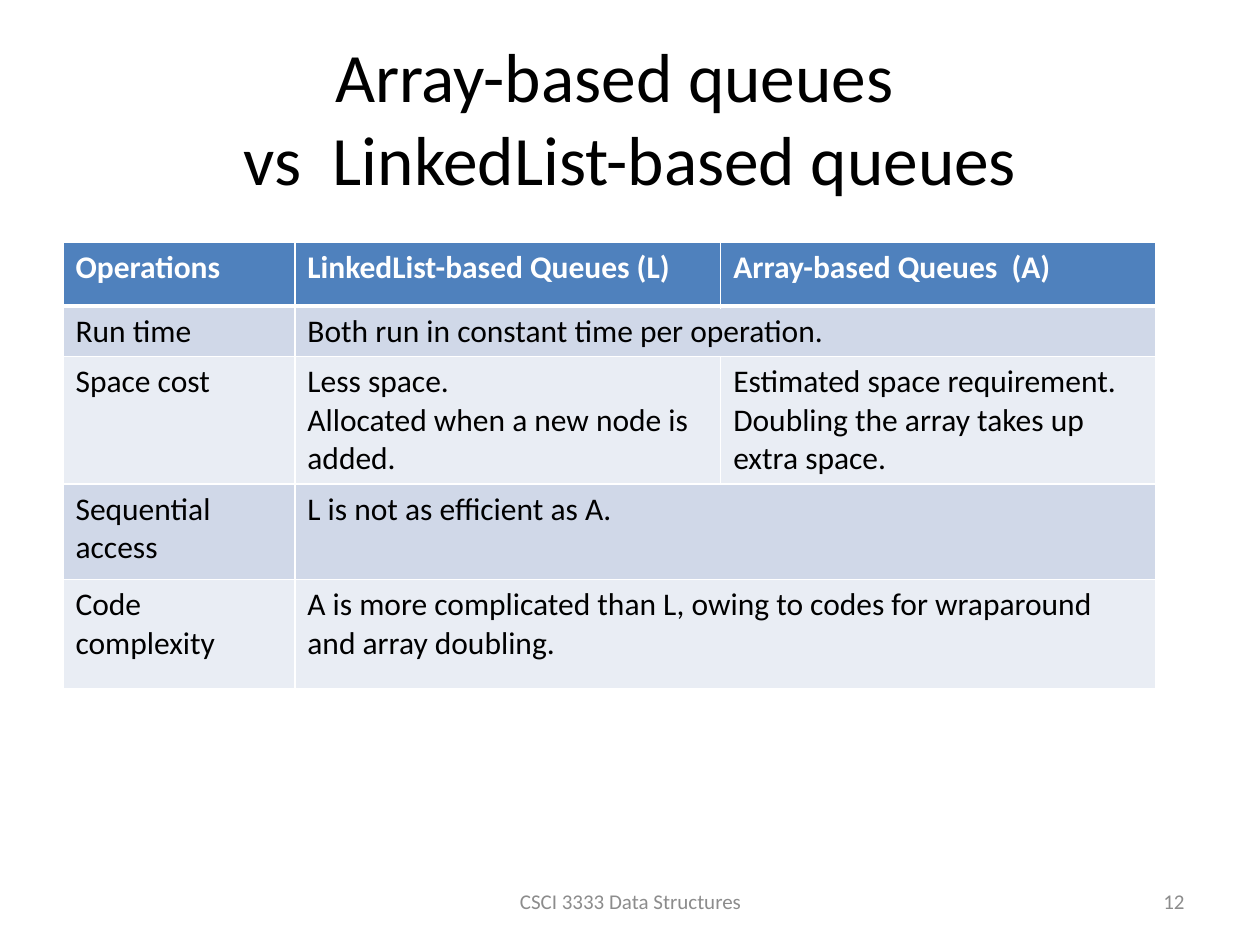
from lxml import etree
from pptx import Presentation
from pptx import util as u
from pptx.dml.color import RGBColor
from pptx.enum import text
from pptx.oxml import ns

WIDTH, HEIGHT = 10, 7.5
FONT = "Calibri"
COLOURS = {
    "ink": "000000",
    "paper": "FFFFFF",
    "muted": "8C8C8C",
    "header": "4F81BD",
    "band_dark": "D0D8E8",
    "band_light": "E9EDF4",
}
COLUMNS = [1.84, 3.38, 3.45]
ROWS = [0.51, 0.39, 1.01, 0.76, 0.87]
COMPARISON = [
    [["Operations"], ["LinkedList-based Queues (L)"], ["Array-based Queues  (A)"]],
    [["Run time"], ["Both run in constant time per operation."]],
    [
        ["Space cost"],
        ["Less space.", "Allocated when a new node is added."],
        ["Estimated space requirement.", "Doubling the array takes up extra space."],
    ],
    [["Sequential access"], ["L is not as efficient as A."]],
    [
        ["Code complexity"],
        ["A is more complicated than L, owing to codes for wraparound and array doubling."],
    ],
]


def colour(name):
    return RGBColor.from_string(COLOURS[name])


def add_span(para, words, size, ink, bold=False):
    span = para.add_run()
    span.text = words
    span.font.name = FONT
    span.font.size = u.Pt(size)
    span.font.bold = bold
    span.font.color.rgb = colour(ink)


def add_text(page, box, lines, size, ink, align):
    frame = page.shapes.add_textbox(*map(u.Inches, box)).text_frame
    frame.word_wrap = True
    frame.vertical_anchor = text.MSO_ANCHOR.MIDDLE
    para = frame.paragraphs[0]
    para.alignment = align
    for index, line in enumerate(lines):
        if index:
            para.add_line_break()
        add_span(para, line, size, ink)


def add_title(page, box):
    lines = ["Array-based queues  ", "vs  LinkedList-based queues"]
    add_text(page, box, lines, 39.6, "ink", text.PP_ALIGN.CENTER)


def add_footer(page, box):
    left, top, width, height = box
    course_box = (left + 0.3244 * width, top, 0.3522 * width, height)
    number_box = (left + 0.7411 * width, top, 0.2589 * width, height)
    add_text(page, course_box, ["CSCI 3333 Data Structures"], 12, "muted", text.PP_ALIGN.CENTER)
    add_text(page, number_box, ["12"], 12, "muted", text.PP_ALIGN.RIGHT)


def add_borders(cell, top, bottom):
    properties = cell._tc.get_or_add_tcPr()
    for side, points in (("L", 1), ("R", 1), ("T", top), ("B", bottom)):
        line = etree.SubElement(properties, ns.qn(f"a:ln{side}"), w=str(u.Pt(points)))
        fill = etree.SubElement(line, ns.qn("a:solidFill"))
        etree.SubElement(fill, ns.qn("a:srgbClr"), val=COLOURS["paper"])


def style_cell(cell, row):
    add_borders(cell, 3 if row == 1 else 1, 3 if row == 0 else 1)
    band = "header" if row == 0 else ("band_light", "band_dark")[row % 2]
    cell.fill.solid()
    cell.fill.fore_color.rgb = colour(band)


def fill_cell(cell, lines, ink, bold):
    frame = cell.text_frame
    for index, line in enumerate(lines):
        para = frame.add_paragraph() if index else frame.paragraphs[0]
        add_span(para, line, 18, ink, bold)


def add_comparison(page, box):
    frame = page.shapes.add_table(len(ROWS), len(COLUMNS), *map(u.Inches, box))
    table = frame.table
    for column, width in zip(table.columns, COLUMNS):
        column.width = u.Inches(width)
    for row, height in zip(table.rows, ROWS):
        row.height = u.Inches(height)
    for row, entries in enumerate(COMPARISON):
        for column in range(len(COLUMNS)):
            style_cell(table.cell(row, column), row)
        if len(entries) < len(COLUMNS):
            table.cell(row, len(entries) - 1).merge(table.cell(row, len(COLUMNS) - 1))
        for column, lines in enumerate(entries):
            ink = "paper" if row == 0 else "ink"
            fill_cell(table.cell(row, column), lines, ink, row == 0)


def main():
    deck = Presentation()
    deck.slide_width, deck.slide_height = u.Inches(WIDTH), u.Inches(HEIGHT)
    page = deck.slides.add_slide(deck.slide_layouts[6])
    margin = 0.05 * WIDTH
    content = WIDTH - 2 * margin
    add_title(page, (margin, 0.04 * HEIGHT, content, 1.25))
    add_footer(page, (margin, 6.95, content, 0.4))
    add_comparison(page, (margin, 1.92, sum(COLUMNS), sum(ROWS)))
    deck.save("out.pptx")


if __name__ == "__main__":
    main()
